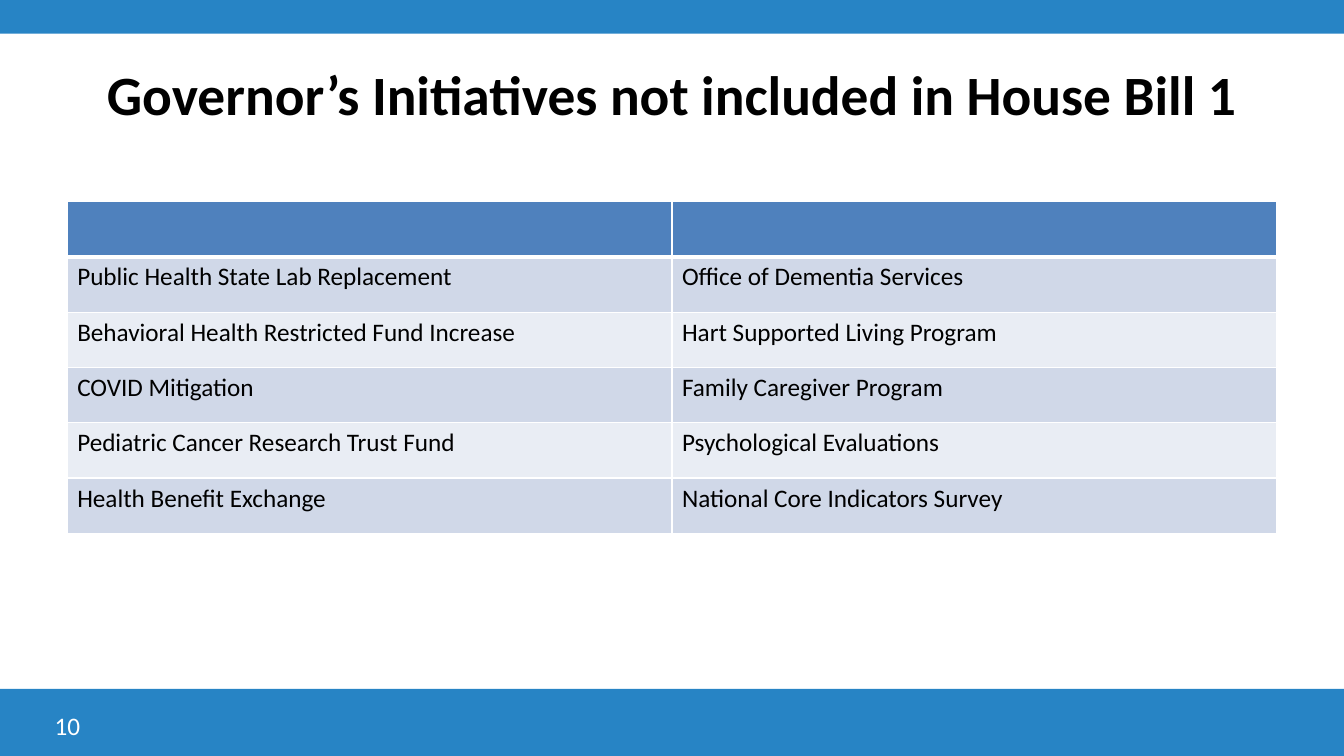
from lxml.etree import SubElement
from pptx import Presentation
from pptx.dml.color import RGBColor as RGB
from pptx.enum.shapes import MSO_SHAPE as SHAPE
from pptx.enum.text import MSO_ANCHOR as ANCHOR, PP_ALIGN as ALIGN
from pptx.oxml.ns import qn
from pptx.util import Pt

HUES = {"bar": "2784C5", "head": "4F81BD", "odd": "D0D8E8",
        "even": "E9EDF4", "white": "FFFFFF", "black": "000000"}
ROWS = [
    ("", ""),
    ("Public Health State Lab Replacement", "Office of Dementia Services"),
    ("Behavioral Health Restricted Fund Increase", "Hart Supported Living Program"),
    ("COVID Mitigation", "Family Caregiver Program"),
    ("Pediatric Cancer Research Trust Fund", "Psychological Evaluations"),
    ("Health Benefit Exchange", "National Core Indicators Survey"),
]


def style(para, size, hue, bold=False):
    form = {"name": "Calibri", "size": Pt(size), "bold": bold}
    for key, value in form.items():
        setattr(para.font, key, value)
    para.font.color.rgb = RGB.from_string(HUES[hue])


def edge(cell, side, width):
    line = SubElement(cell._tc.get_or_add_tcPr(), qn("a:ln" + side),
                      w=str(Pt(width)))
    fill = SubElement(line, qn("a:solidFill"))
    SubElement(fill, qn("a:srgbClr"), val=HUES["white"])


deck = Presentation()
deck.slide_width, deck.slide_height = Pt(960), Pt(540)
slide = deck.slides.add_slide(deck.slide_layouts[5])

# Top and bottom bars
for top, height in ((0, 24), (492, 48)):
    bar = slide.shapes.add_shape(SHAPE.RECTANGLE, 0, Pt(top), Pt(960), Pt(height))
    bar.shadow.inherit = False
    bar.fill.solid()
    bar.fill.fore_color.rgb = RGB.from_string(HUES["bar"])
    bar.line.fill.background()

# Title
title = slide.shapes.title
title.left, title.top, title.width, title.height = Pt(48), Pt(21.6), Pt(864), Pt(90)
title.text_frame.text = "Governor’s Initiatives not included in House Bill 1"
title.text_frame.vertical_anchor = ANCHOR.MIDDLE
title.text_frame.paragraphs[0].alignment = ALIGN.CENTER
style(title.text_frame.paragraphs[0], 39.6, "black", True)

# Table of initiatives
table = slide.shapes.add_table(len(ROWS), 2, Pt(48), Pt(144), Pt(864), Pt(237)).table
for r, row in enumerate(ROWS):
    table.rows[r].height = Pt(39.5)
    band = "head" if r == 0 else "odd" if r % 2 else "even"
    for c, text in enumerate(row):
        cell = table.cell(r, c)
        for side in "LRTB":
            thick = (r, side) in ((0, "B"), (1, "T"))
            edge(cell, side, 3 if thick else 1)
        cell.fill.solid()
        cell.fill.fore_color.rgb = RGB.from_string(HUES[band])
        cell.text = text
        style(cell.text_frame.paragraphs[0], 18, "black")

# Page number
page = slide.shapes.add_textbox(Pt(32), Pt(504), Pt(224), Pt(29)).text_frame
page.word_wrap = True
page.vertical_anchor = ANCHOR.MIDDLE
page.text = "10"
style(page.paragraphs[0], 18, "white")

deck.save("out.pptx")
